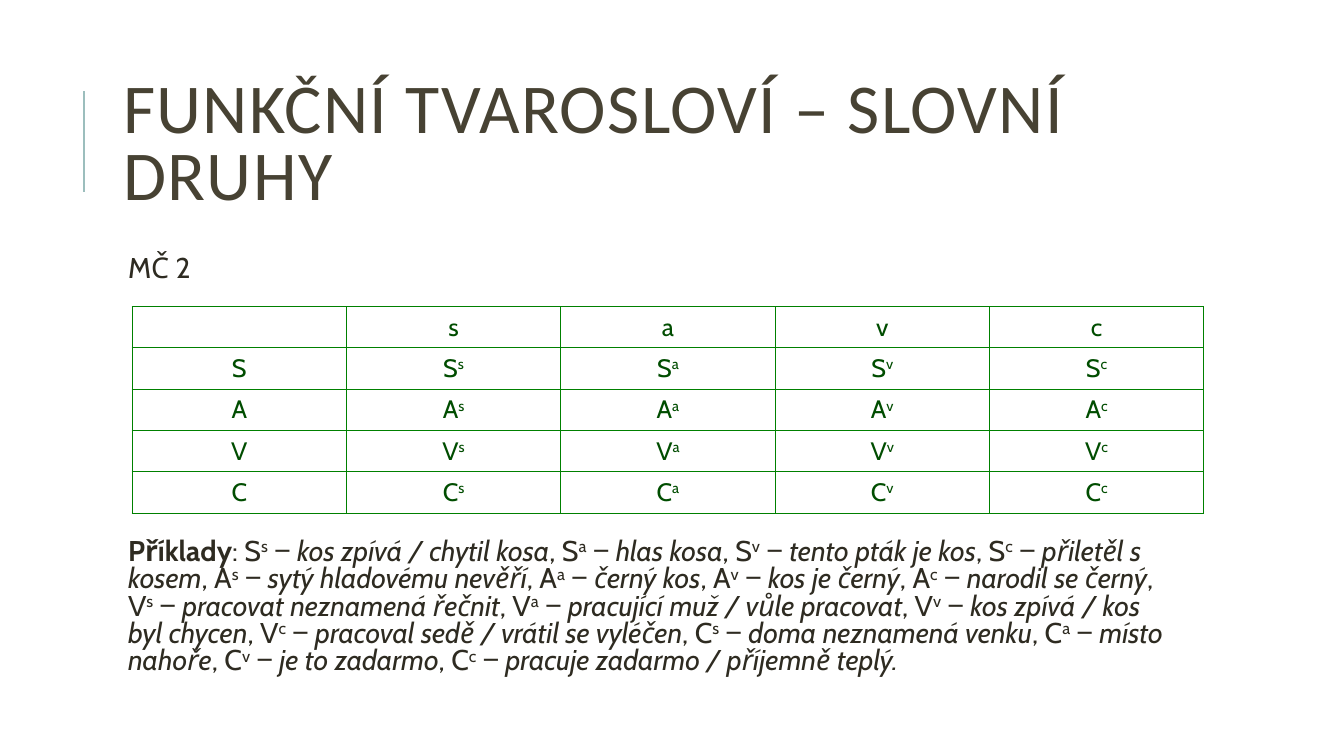
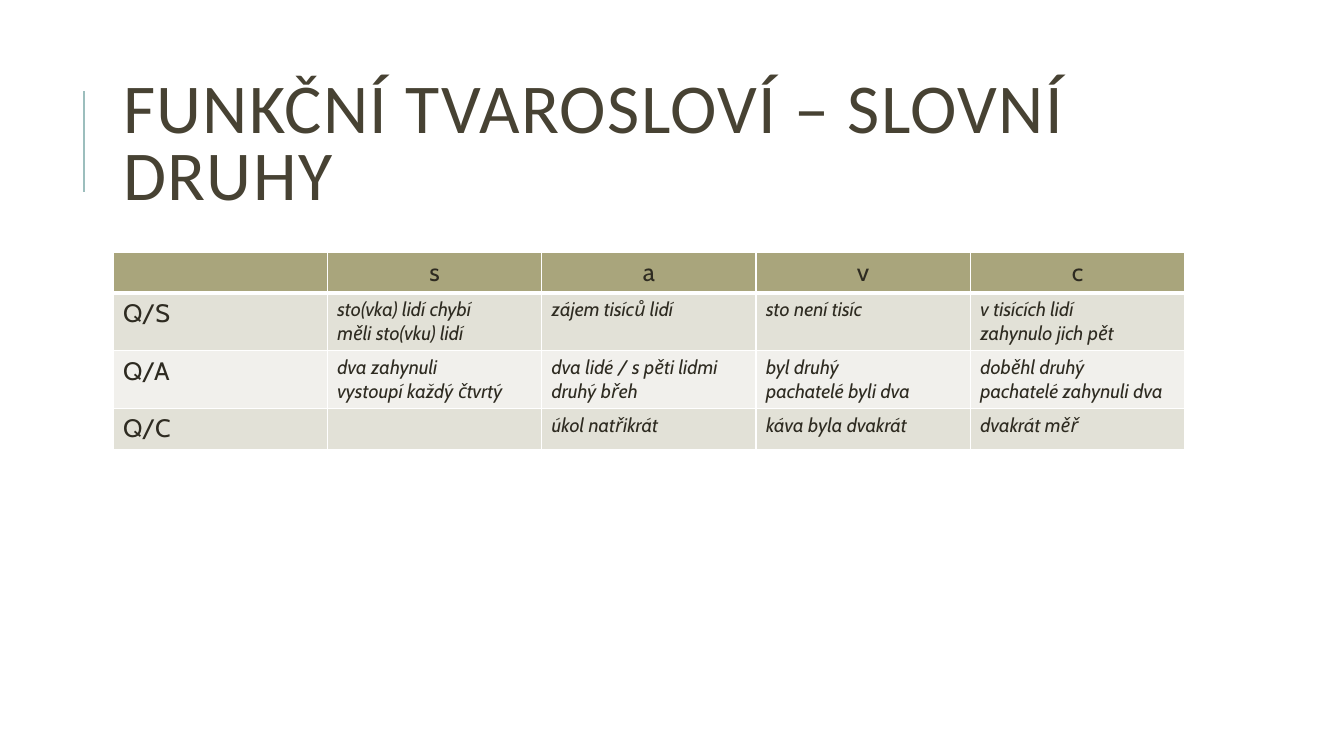
from dataclasses import dataclass

from lxml import etree
from pptx import Presentation
from pptx.dml.color import RGBColor
from pptx.enum.shapes import MSO_CONNECTOR
from pptx.enum.text import MSO_ANCHOR, MSO_AUTO_SIZE, PP_ALIGN
from pptx.oxml.ns import qn
from pptx.util import Inches, Pt

STRAIGHT = MSO_CONNECTOR.STRAIGHT
LEFT, CENTER = PP_ALIGN.LEFT, PP_ALIGN.CENTER
TOP, MIDDLE = MSO_ANCHOR.TOP, MSO_ANCHOR.MIDDLE
NO_FIT = MSO_AUTO_SIZE.NONE
TITLE_AND_CONTENT, TITLE_ONLY = 1, 5


@dataclass(frozen=True)
class Theme:
    title_font: str = "Calibri"
    text_font: str = "Cabin"
    title: str = "474233"
    text: str = "2E2B21"
    accent: str = "9CBEBD"
    grid: str = "008000"
    grid_text: str = "004D00"
    white: str = "FFFFFF"
    header: str = "A9A57C"
    bands: tuple = ("E2E1D7", "F1F0EC")
    title_size: float = 50
    body_size: float = 20.4
    table_size: float = 18
    example_size: float = 14
    left: float = 1.12
    width: float = 10.63
    content_top: float = 2.5


THEME = Theme()
TITLE = "FUNKČNÍ TVAROSLOVÍ – SLOVNÍ DRUHY"
FUNCTIONS = "savc"
EXAMPLES = {
    "S": ["kos zpívá / chytil kosa", "hlas kosa", "tento pták je kos", "přiletěl s kosem"],
    "A": ["sytý hladovému nevěří", "černý kos", "kos je černý", "narodil se černý"],
    "V": ["pracovat neznamená řečnit", "pracující muž / vůle pracovat",
          "kos zpívá / kos byl chycen", "pracoval sedě / vrátil se vyléčen"],
    "C": ["doma neznamená venku", "místo nahoře", "je to zadarmo",
          "pracuje zadarmo / příjemně teplý."],
}
NUMERALS = {
    "Q/S": [["sto(vka) lidí chybí", "měli sto(vku) lidí"], ["zájem tisíců lidí"],
            ["sto není tisíc"], ["v tisících lidí", "zahynulo jich pět"]],
    "Q/A": [["dva zahynuli", "vystoupí každý čtvrtý"],
            ["dva lidé / s pěti lidmi", "druhý břeh"],
            ["byl druhý", "pachatelé byli dva"],
            ["doběhl druhý", "pachatelé zahynuli dva"]],
    "Q/C": [[], ["úkol natřikrát"], ["káva byla dvakrát"], ["dvakrát měř"]],
}


def style(paragraph, size, color, font=THEME.text_font, align=LEFT, italic=False):
    paragraph.alignment = align
    paragraph.font.name = font
    paragraph.font.size = Pt(size)
    paragraph.font.italic = italic
    paragraph.font.bold = False
    paragraph.font.color.rgb = RGBColor.from_string(color)


def add_run(paragraph, text, superscript=False, **emphasis):
    run = paragraph.add_run()
    run.text = text
    for name, value in emphasis.items():
        setattr(run.font, name, value)
    if superscript:
        run._r.get_or_add_rPr().set("baseline", "30000")


def place(placeholder, top, height):
    placeholder.left, placeholder.top = Inches(THEME.left), Inches(top)
    placeholder.width, placeholder.height = Inches(THEME.width), Inches(height)
    placeholder.text_frame.word_wrap = True
    placeholder.text_frame.auto_size = NO_FIT
    return placeholder.text_frame


def add_topic_slide(deck, layout):
    slide = deck.slides.add_slide(deck.slide_layouts[layout])
    rule = slide.shapes.add_connector(
        STRAIGHT, Inches(0.83), Inches(1.9), Inches(0.83), Inches(0.9))
    rule.line.color.rgb = RGBColor.from_string(THEME.accent)
    rule.line.width = Pt(1.5)
    etree.SubElement(rule._element.spPr, qn("a:effectLst"))
    frame = place(slide.shapes.title, 0.64, 1.64)
    frame.vertical_anchor = MIDDLE
    heading = frame.paragraphs[0]
    heading.text = TITLE
    style(heading, THEME.title_size, THEME.title, THEME.title_font)
    heading.line_spacing = 0.8
    heading.font._element.set("spc", "100")
    return slide


def add_body_paragraph(paragraph, space_before):
    style(paragraph, THEME.body_size, THEME.text)
    paragraph.line_spacing = 0.8
    paragraph.space_before, paragraph.space_after = Pt(space_before), Pt(2)
    properties = paragraph._p.get_or_add_pPr()
    properties.set("marL", str(Inches(0.1)))
    properties.set("indent", "0")
    bullet = etree.Element(qn("a:buNone"))
    properties.find(qn("a:defRPr")).addprevious(bullet)


def add_examples(slide):
    frame = place(slide.placeholders[1], THEME.content_top, 4.4)
    frame.margin_left = frame.margin_right = Inches(0.05)
    frame.margin_top = frame.margin_bottom = Inches(0.05)
    label = frame.paragraphs[0]
    label.text = "MČ 2"
    add_body_paragraph(label, 12)
    examples = frame.add_paragraph()
    add_body_paragraph(examples, 180)
    add_run(examples, "Příklady", bold=True)
    separator = ": "
    for word_class, phrases in EXAMPLES.items():
        for function, phrase in zip(FUNCTIONS, phrases):
            add_run(examples, separator + word_class)
            add_run(examples, function, superscript=True)
            add_run(examples, " ‒ ")
            add_run(examples, phrase, italic=True)
            separator = ", "


def add_grid(slide, left, top, heights):
    columns = len(FUNCTIONS) + 1
    table = slide.shapes.add_table(
        len(heights), columns, Inches(left), Inches(top),
        Inches(THEME.width), Inches(sum(heights))).table
    table.first_row = table.horz_banding = False
    for row, height in zip(table.rows, heights):
        row.height = Inches(height)
    return table


def set_borders(cell, color, width, bottom=None):
    properties = cell._tc.get_or_add_tcPr()
    for side in ("lnL", "lnR", "lnT", "lnB"):
        points = bottom if bottom and side == "lnB" else width
        line = etree.SubElement(properties, qn(f"a:{side}"), w=str(Pt(points)))
        fill = etree.SubElement(line, qn("a:solidFill"))
        etree.SubElement(fill, qn("a:srgbClr"), val=color)


def set_fill(cell, color):
    cell.fill.solid()
    cell.fill.fore_color.rgb = RGBColor.from_string(color)


def add_class_table(slide):
    classes = ["", *EXAMPLES]
    table = add_grid(slide, 1.31, 3.04, [0.41] * len(classes))
    for row, word_class in enumerate(classes):
        for column, function in enumerate(["", *FUNCTIONS]):
            cell = table.cell(row, column)
            set_borders(cell, THEME.grid, 0.75)
            cell.fill.background()
            cell.vertical_anchor = MIDDLE
            symbol = cell.text_frame.paragraphs[0]
            style(symbol, THEME.table_size, THEME.grid_text, align=CENTER)
            if word_class:
                add_run(symbol, word_class)
            if function:
                add_run(symbol, function, superscript=bool(word_class))


def add_numeral_table(slide):
    rows = [[[], *FUNCTIONS]]
    rows += [[[label], *phrases] for label, phrases in NUMERALS.items()]
    table = add_grid(slide, THEME.left, THEME.content_top, [0.4, 0.57, 0.57, 0.4])
    for row, contents in enumerate(rows):
        is_header = row == 0
        for column, lines in enumerate(contents):
            cell = table.cell(row, column)
            set_borders(cell, THEME.white, 1, bottom=3 if is_header else None)
            set_fill(cell, THEME.header if is_header else THEME.bands[(row - 1) % 2])
            cell.vertical_anchor = TOP
            is_example = not is_header and column > 0
            cell.text_frame.text = "\n".join(lines)
            for paragraph in cell.text_frame.paragraphs:
                style(paragraph,
                      THEME.example_size if is_example else THEME.table_size,
                      THEME.text, align=CENTER if is_header else LEFT,
                      italic=is_example)


def main():
    deck = Presentation()
    deck.slide_width, deck.slide_height = Inches(13.33), Inches(7.5)
    classes_slide = add_topic_slide(deck, TITLE_AND_CONTENT)
    add_examples(classes_slide)
    add_class_table(classes_slide)
    add_numeral_table(add_topic_slide(deck, TITLE_ONLY))
    deck.save("out.pptx")


if __name__ == "__main__":
    main()
